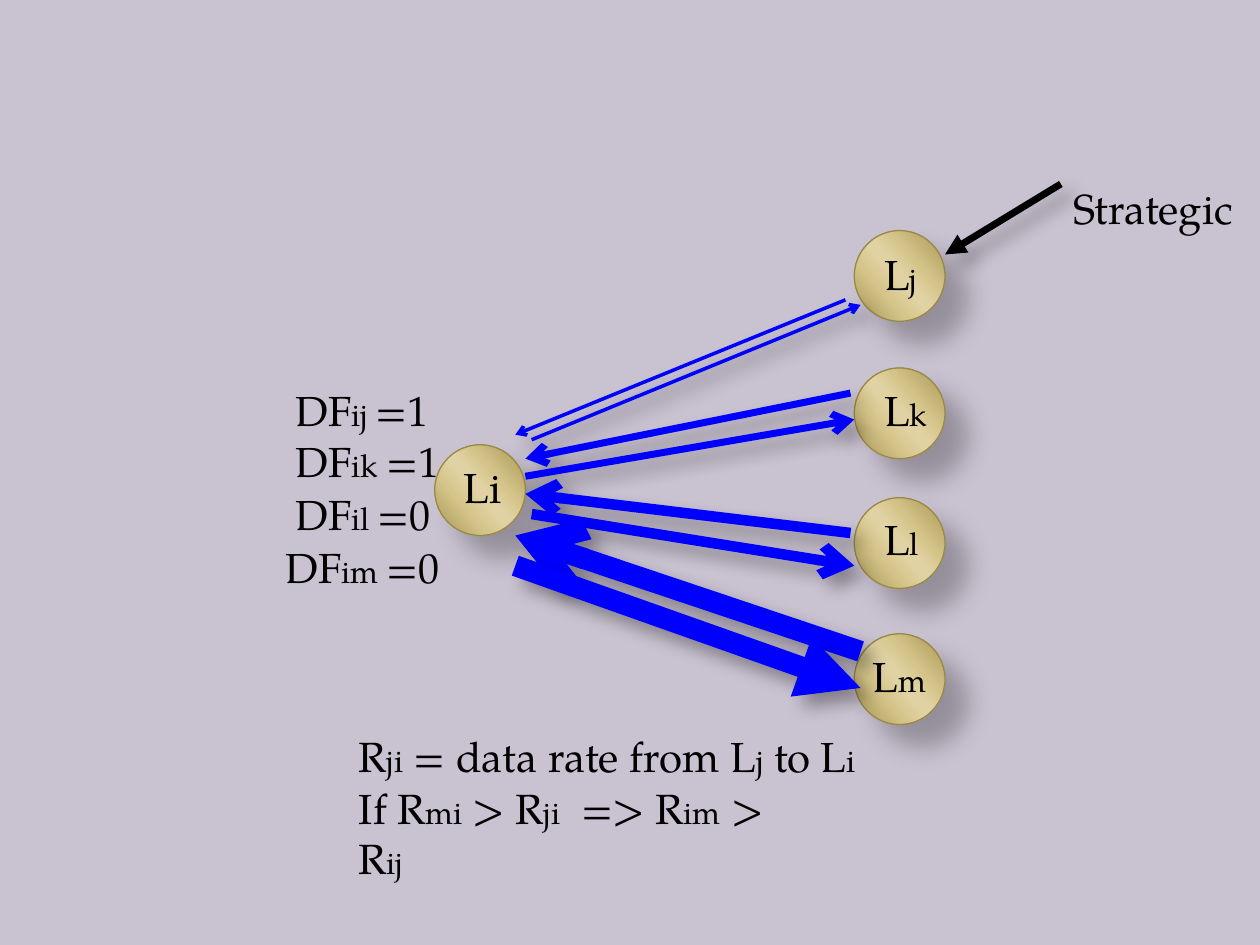
from pptx import Presentation
from pptx.dml.color import RGBColor
from pptx.enum.shapes import MSO_CONNECTOR, MSO_SHAPE
from pptx.enum.text import MSO_AUTO_SIZE
from pptx.oxml import parse_xml
from pptx.oxml.ns import nsdecls
from pptx.util import Inches, Pt

BACKGROUND = RGBColor(0xC9, 0xC2, 0xD1)
BLACK = RGBColor(0x00, 0x00, 0x00)
BLUE = RGBColor(0x00, 0x00, 0xFF)
RIM = RGBColor(0x99, 0x89, 0x46)
GOLD_DARK = RGBColor(0xA5, 0x94, 0x52)
GOLD_MID = RGBColor(0xD5, 0xC4, 0x89)
GOLD_LIGHT = RGBColor(0xE1, 0xD2, 0xA3)
GOLD_WARM = RGBColor(0xD6, 0xC5, 0x8A)

GOLD_STOPS = [(0, GOLD_DARK), (33, GOLD_MID), (47, GOLD_LIGHT),
              (53, GOLD_LIGHT), (68, GOLD_WARM), (100, GOLD_DARK)]
NODE_SHADOW = (26, 15, 18)
LINE_SHADOW = (35, 10.2, 8)


class Diagram:
    font = "TeX Gyre Pagella"
    size = Pt(24)
    sub_size = Pt(18)
    diameter = 0.72

    def __init__(self, slide):
        self.s = slide
        fill = slide.background.fill
        fill.solid()
        fill.fore_color.rgb = BACKGROUND

    def shadow(self, sp, alpha, blur, dist):
        sp._element.spPr.append(parse_xml(
            f'<a:effectLst {nsdecls("a")}><a:outerShdw blurRad="{Pt(blur)}" '
            f'dist="{Pt(dist)}" dir="2700000" algn="tl" rotWithShape="0">'
            f'<a:srgbClr val="{BLACK}"><a:alpha val="{alpha * 1000}"/>'
            f'</a:srgbClr></a:outerShdw></a:effectLst>'))

    def gold_fill(self, sp):
        sp.fill.gradient()
        sp.fill.gradient_angle = 0
        grad = sp._element.spPr.gradFill
        stops = grad.gsLst
        for stop in list(stops):
            stops.remove(stop)
        for pos, color in GOLD_STOPS:
            stops.append(parse_xml(
                f'<a:gs {nsdecls("a")} pos="{pos * 1000}">'
                f'<a:srgbClr val="{color}"/></a:gs>'))
        grad.lin.set("ang", str(139 * 60000))

    def text(self, x, y, w, runs, wrap=False, shapes=None):
        sp = (shapes or self.s.shapes).add_textbox(
            Inches(x), Inches(y), Inches(w), Inches(0.5))
        tf = sp.text_frame
        tf.word_wrap = wrap
        tf.auto_size = MSO_AUTO_SIZE.SHAPE_TO_FIT_TEXT
        p = tf.paragraphs[0]
        for i, part in enumerate(runs):
            r = p.add_run()
            r.text = part
            r.font.name = self.font
            r.font.size = self.sub_size if i % 2 else self.size
            r.font.color.rgb = BLACK

    def node(self, x, y, runs, text_dx, text_dy, text_w):
        shapes = self.s.shapes.add_group_shape().shapes
        d = Inches(self.diameter)
        sp = shapes.add_shape(MSO_SHAPE.OVAL, Inches(x), Inches(y), d, d)
        self.gold_fill(sp)
        sp.line.color.rgb = RIM
        sp.line.width = Pt(0.75)
        self.shadow(sp, *NODE_SHADOW)
        self.text(x + text_dx, y + text_dy, text_w, runs, shapes=shapes)

    def arrow(self, start, end, width, color=BLUE, head="arrow"):
        sp = self.s.shapes.add_connector(
            MSO_CONNECTOR.STRAIGHT, *map(Inches, start + end))
        sp.line.color.rgb = color
        sp.line.width = Pt(width)
        sp.line._get_or_add_ln().append(
            parse_xml(f'<a:tailEnd {nsdecls("a")} type="{head}"/>'))
        self.shadow(sp, *LINE_SHADOW)


def main():
    prs = Presentation()
    prs.slide_width, prs.slide_height = Inches(10), Inches(7.5)
    d = Diagram(prs.slides.add_slide(prs.slide_layouts[6]))

    for sub, y, dx, dy, w in [("j", 1.83, 0.14, 0.09, 0.47),
                              ("k", 2.92, 0.14, 0.08, 0.55),
                              ("l", 3.95, 0.14, 0.08, 0.5),
                              ("m", 5.03, 0.05, 0.08, 0.64)]:
        d.node(6.78, y, ["L", sub], dx, dy, w)
    d.node(3.45, 3.53, ["Li"], 0.13, 0.08, 0.51)

    for sub, value, x, y in [("ij", 1, 2.25, 3), ("ik", 1, 2.25, 3.41),
                             ("il", 0, 2.25, 3.83), ("im", 0, 2.17, 4.25)]:
        d.text(x, y, 1.42, ["DF", f"{sub} ", f"={value}"], wrap=True)

    for width, in_start, in_end, out_start, out_end, out_head in [
            (2, (6.71, 2.38), (4.09, 3.45), (4.22, 3.49), (6.83, 2.42), "arrow"),
            (4, (6.75, 3.12), (4.17, 3.64), (4.17, 3.78), (6.78, 3.33), "arrow"),
            (6, (6.75, 4.23), (4.17, 3.92), (4.22, 4.08), (6.78, 4.49), "arrow"),
            (12, (6.83, 5.17), (4.09, 4.25), (4.09, 4.49), (6.83, 5.46), "triangle")]:
        d.arrow(in_start, in_end, width)
        d.arrow(out_start, out_end, width, head=out_head)

    d.text(2.75, 5.75, 4.23, ["R", "ji", " = data rate from L", "j", " to L", "i"])
    d.text(2.75, 6.16, 3.67,
           ["If R", "mi", " > R", "ji", "  => R", "im", " > R", "ij"], wrap=True)
    d.arrow((8.42, 1.46), (7.5, 2.02), 4, BLACK, "triangle")
    d.text(8.42, 1.4, 1.5, ["Strategic"])
    prs.save("out.pptx")


if __name__ == "__main__":
    main()
